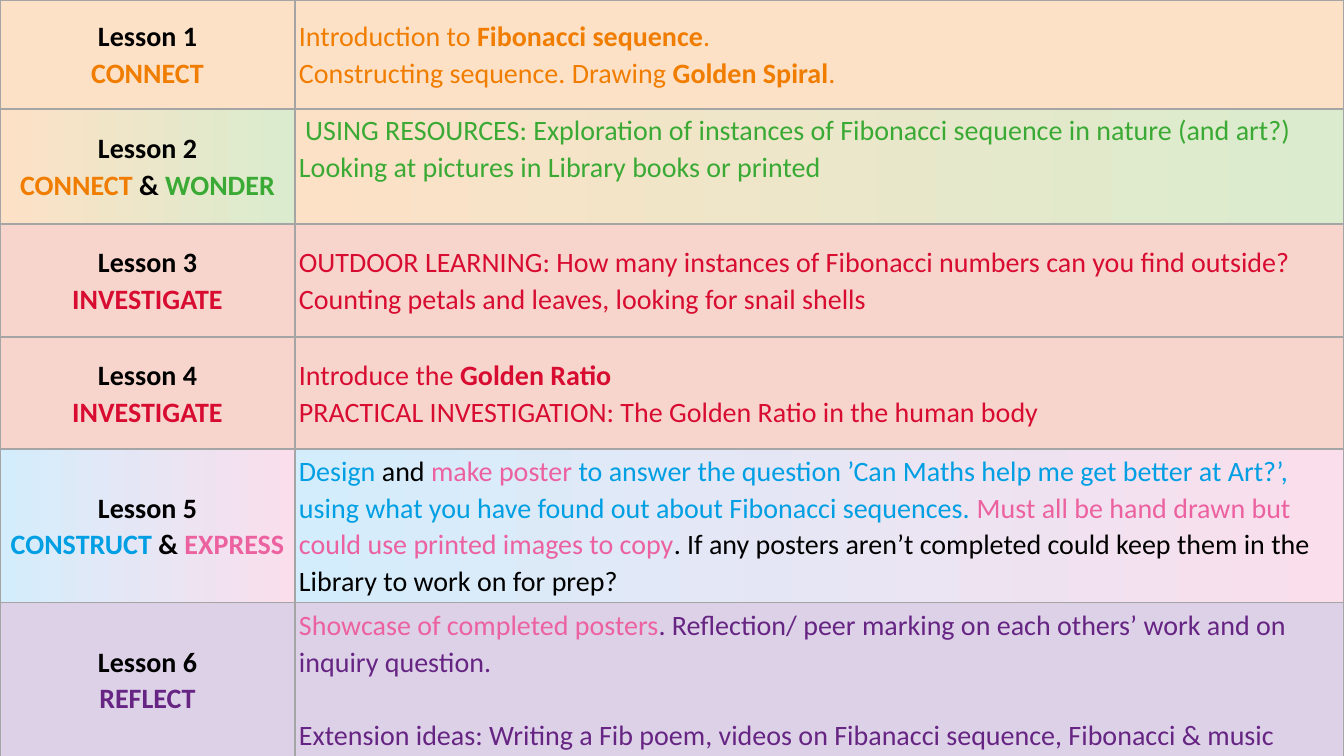
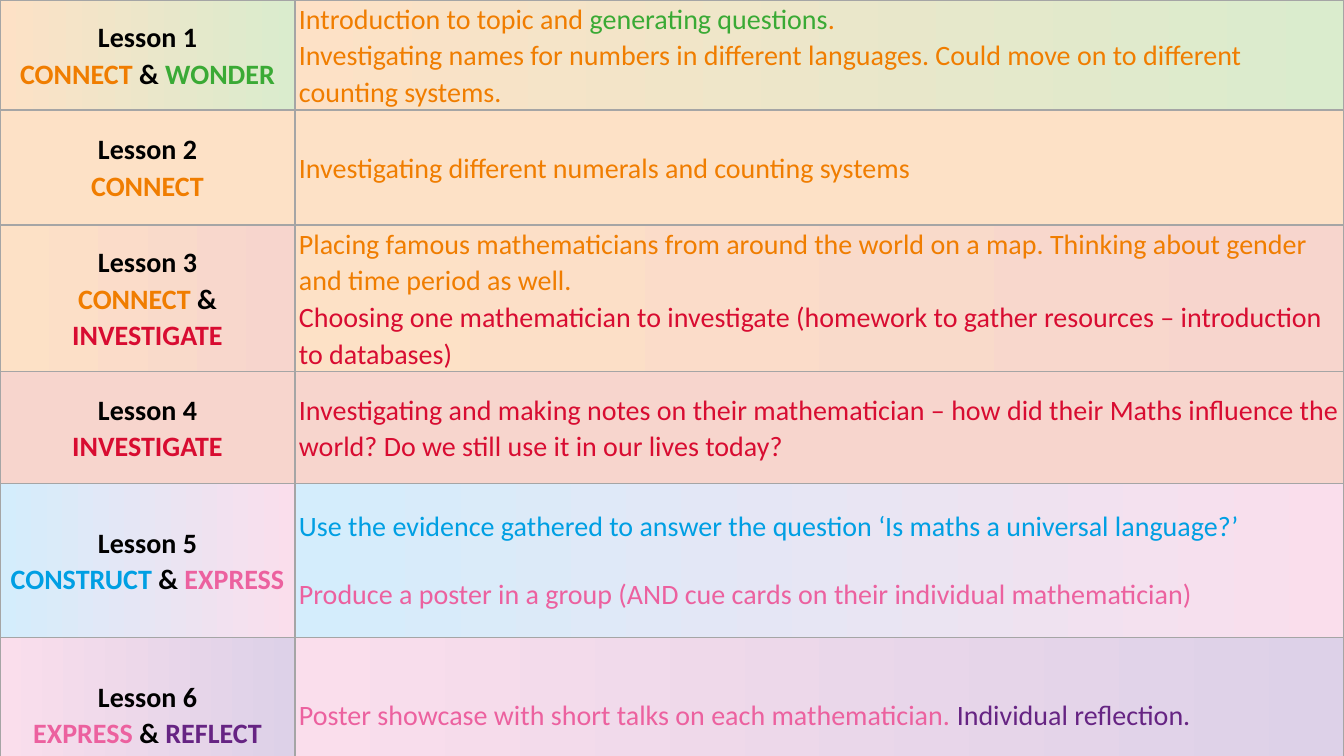
from pptx import Presentation
from pptx.dml.color import RGBColor
from pptx.enum.text import MSO_ANCHOR, PP_ALIGN
from pptx.oxml import parse_xml
from pptx.oxml.ns import nsdecls
from pptx.util import Pt

MIDDLE, CENTER, LEFT = MSO_ANCHOR.MIDDLE, PP_ALIGN.CENTER, PP_ALIGN.LEFT
PX = 914400 / 100.8
WIDTH, HEIGHT = 1344, 756
COLUMNS = [295, 1049]
ROWS = [109, 115, 113, 112, 154, 154]
MARGIN = 4
FONT, SIZE = "Calibri", Pt(20)
LINE = 1.07

CONNECT, WONDER, INVESTIGATE = "CONNECT", "WONDER", "INVESTIGATE"
CONSTRUCT, EXPRESS, REFLECT = "CONSTRUCT", "EXPRESS", "REFLECT"
BLACK = "BLACK"
TEXT = {CONNECT: "F07D00", WONDER: "3AAA35", INVESTIGATE: "D80C31",
        CONSTRUCT: "009FE3", EXPRESS: "EC619F", REFLECT: "662483",
        BLACK: "000000"}
TINT = {CONNECT: "FDE1C6", WONDER: "DAECCD", INVESTIGATE: "F7D5CD",
        CONSTRUCT: "D4EDFC", EXPRESS: "FADEEC", REFLECT: "DDD1E8"}
BORDER = "A5A5A5"

# Each lesson: its phases, its paragraphs of (text, colour[, bold]) runs, and
# optional settings for the description cell.
FIBONACCI = [
    ([CONNECT], [
        [("Introduction to ", CONNECT), ("Fibonacci sequence", CONNECT, True),
         (".", CONNECT)],
        [("Constructing sequence. Drawing ", CONNECT),
         ("Golden Spiral", CONNECT, True), (".", CONNECT)]], {}),
    ([CONNECT, WONDER], [
        [(" USING RESOURCES: Exploration of instances of Fibonacci sequence "
          "in nature (and art?)", WONDER)],
        [("Looking at pictures in Library books or printed", WONDER)]],
     {"bottom": 37}),
    ([INVESTIGATE], [
        [("OUTDOOR LEARNING: How many instances of Fibonacci numbers can you "
          "find outside? Counting petals and leaves, looking for snail shells",
          INVESTIGATE)]], {}),
    ([INVESTIGATE], [
        [("Introduce the ", INVESTIGATE), ("Golden Ratio", INVESTIGATE, True)],
        [("PRACTICAL INVESTIGATION: The Golden Ratio in the human body",
          INVESTIGATE)]], {}),
    ([CONSTRUCT, EXPRESS], [
        [("Design", CONSTRUCT), (" and ", BLACK), ("make poster ", EXPRESS),
         ("to answer the question ’Can Maths help me get better at Art?’, "
          "using what you have found out about Fibonacci sequences. ",
          CONSTRUCT),
         ("Must all be hand drawn but could use printed images to copy",
          EXPRESS),
         (". If any posters aren’t completed could keep them in the Library "
          "to work on for prep?", BLACK)]], {}),
    ([REFLECT], [
        [("Showcase of completed posters", EXPRESS),
         (". Reflection/ peer marking on each others’ work and on inquiry "
          "question.", REFLECT)],
        [("Extension ideas: Writing a Fib poem, videos on Fibanacci sequence, "
          "Fibonacci & music", REFLECT)]], {"gap": 26}),
]

MATHEMATICIANS = [
    ([CONNECT, WONDER], [
        [("Introduction to topic and ", CONNECT),
         ("generating questions", WONDER), (".", CONNECT)],
        [("Investigating names for numbers in different languages. Could move "
          "on to different counting systems.", CONNECT)]], {}),
    ([CONNECT], [
        [("Investigating different numerals and counting systems", CONNECT)]],
     {}),
    ([CONNECT, INVESTIGATE], [
        [("Placing famous mathematicians from around the world on a map. "
          "Thinking about gender and time period as well.", CONNECT)],
        [("Choosing one mathematician to investigate (homework to gather "
          "resources – introduction to databases)", INVESTIGATE)]], {}),
    ([INVESTIGATE], [
        [("Investigating and making notes on their mathematician – how did "
          "their Maths influence the world? Do we still use it in our lives "
          "today?", INVESTIGATE)]], {}),
    ([CONSTRUCT, EXPRESS], [
        [("Use the evidence gathered to answer the question ‘Is maths a "
          "universal language?’", CONSTRUCT)],
        [("Produce a poster in a group (AND cue cards on their individual "
          "mathematician)", EXPRESS)]], {"gap": 24, "spacing": 1.0}),
    ([EXPRESS, REFLECT], [
        [("Poster showcase with short talks on each mathematician. ", EXPRESS),
         ("Individual reflection.", REFLECT)]], {}),
]


def px(n):
    return round(n * PX)


def set_borders(cell):
    tcPr = cell._tc.get_or_add_tcPr()
    for side in "LRTB":
        tcPr.append(parse_xml(
            f'<a:ln{side} {nsdecls("a")} w="12700"><a:solidFill>'
            f'<a:srgbClr val="{BORDER}"/></a:solidFill></a:ln{side}>'))


def set_fill(cell, phases):
    """Fill with one phase's tint, or blend two from left to right."""
    colors = [RGBColor.from_string(TINT[phase]) for phase in phases]
    if len(colors) == 1:
        cell.fill.solid()
        cell.fill.fore_color.rgb = colors[0]
        return
    cell.fill.gradient()
    cell.fill.gradient_angle = 0
    for stop, color in zip(cell.fill.gradient_stops, colors):
        stop.color.rgb = color


def fill_cell(cell, phases, paragraphs, align=LEFT, gap=0, spacing=LINE,
              bottom=0):
    cell.vertical_anchor = MIDDLE
    cell.margin_left = cell.margin_right = px(MARGIN)
    cell.margin_top, cell.margin_bottom = 0, px(bottom)
    set_borders(cell)
    set_fill(cell, phases)
    tf = cell.text_frame
    for i, runs in enumerate(paragraphs):
        p = tf.add_paragraph() if i else tf.paragraphs[0]
        p.alignment, p.line_spacing = align, spacing
        if i and gap:
            p.space_before = Pt(gap)
        for text, color, *bold in runs:
            r = p.add_run()
            r.text = text
            r.font.name, r.font.size, r.font.bold = FONT, SIZE, bool(bold)
            r.font.color.rgb = RGBColor.from_string(TEXT[color])


def lesson_label(number, phases):
    names = []
    for phase in phases:
        if names:
            names.append((" & ", BLACK, True))
        names.append((phase, phase, True))
    return [[(f"Lesson {number}", BLACK, True)], names]


def add_plan(prs, lessons):
    s = prs.slides.add_slide(prs.slide_layouts[6])
    table = s.shapes.add_table(len(lessons), len(COLUMNS), 0, 0,
                               px(sum(COLUMNS)), px(sum(ROWS))).table
    table.first_row = table.horz_banding = False
    for column, width in zip(table.columns, COLUMNS):
        column.width = px(width)
    for row, height in zip(table.rows, ROWS):
        row.height = px(height)
    for i, (phases, paragraphs, settings) in enumerate(lessons):
        fill_cell(table.cell(i, 0), phases, lesson_label(i + 1, phases), CENTER)
        fill_cell(table.cell(i, 1), phases, paragraphs, **settings)


def main():
    prs = Presentation()
    prs.slide_width, prs.slide_height = px(WIDTH), px(HEIGHT)
    for lessons in (FIBONACCI, MATHEMATICIANS):
        add_plan(prs, lessons)
    prs.save("out.pptx")


if __name__ == "__main__":
    main()
